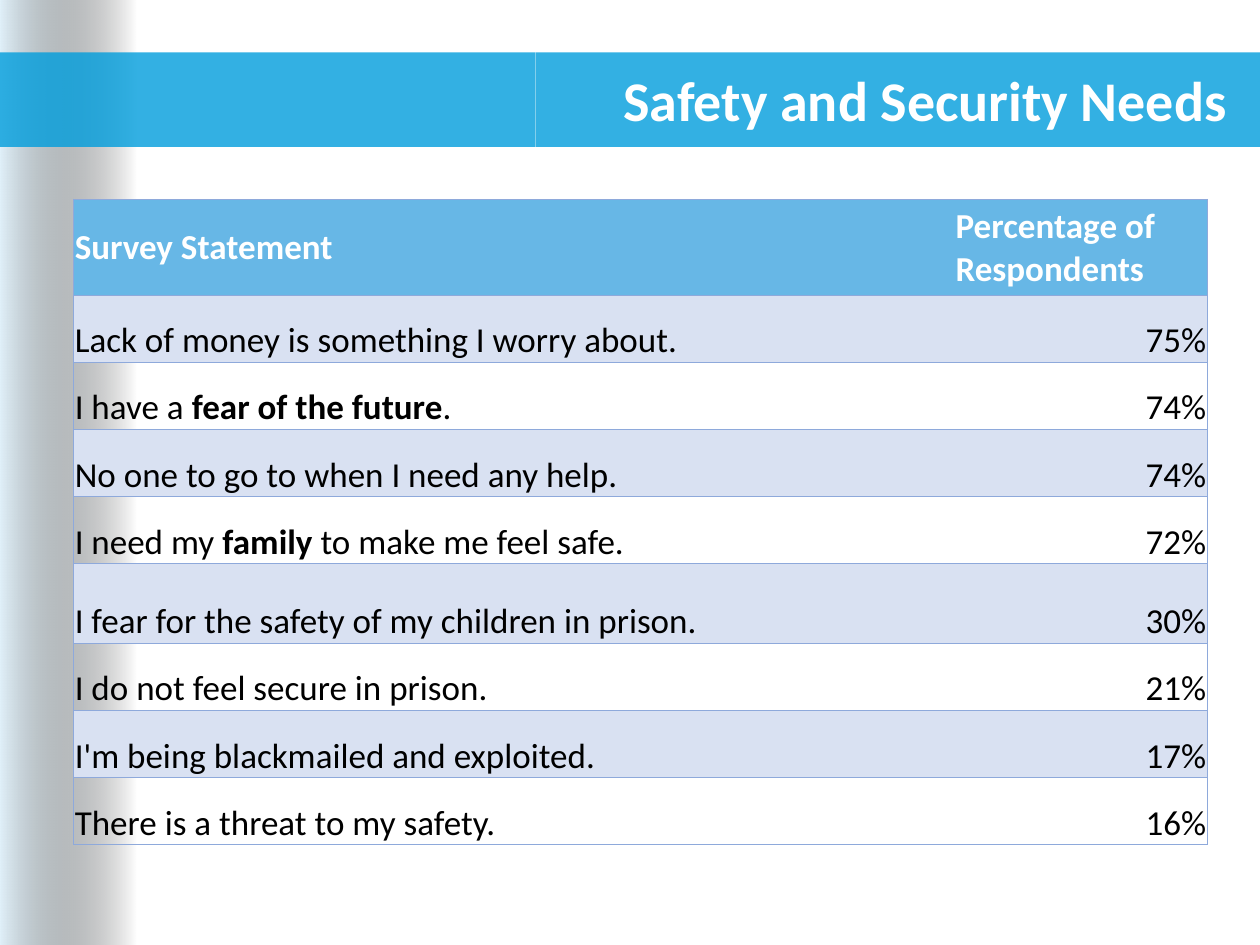
from lxml import etree
from pptx import Presentation
from pptx.dml.color import RGBColor
from pptx.enum.shapes import MSO_SHAPE
from pptx.enum.text import MSO_ANCHOR, PP_ALIGN
from pptx.oxml.ns import qn
from pptx.util import Pt

RECTANGLE = MSO_SHAPE.RECTANGLE
MIDDLE, BOTTOM = MSO_ANCHOR.MIDDLE, MSO_ANCHOR.BOTTOM
LEFT, RIGHT = PP_ALIGN.LEFT, PP_ALIGN.RIGHT

FONT = "Calibri"
WHITE, BLACK = "FFFFFF", "000000"
BAND_BLUE, HEADER_BLUE = "009DDC", "67B7E6"
STRIPE, BORDER = "D9E1F2", "8EA9DB"
BORDER_WIDTH = 0.5

SLIDE_SIZE = (720, 540)
BAND_TOP, BAND_HEIGHT, BAND_SPLIT = 30, 54, 306
COLUMN_WIDTHS = (503.3, 144.7)
HEADER_HEIGHT, ROW_HEIGHT, TALL_ROW_HEIGHT = 54.8, 38.4, 45.4
TALL_ROW = 5

HEADINGS = ("Survey Statement", "Percentage of Respondents")
# Each statement is a list of pieces; every second piece is bold.
RESPONSES = [
    (["Lack of money is something I worry about."], "75%"),
    (["I have a ", "fear of the future", "."], "74%"),
    (["No one to go to when I need any help."], "74%"),
    (["I need my ", "family", " to make me feel safe."], "72%"),
    (["I fear for the safety of my children in prison."], "30%"),
    (["I do not feel secure in prison."], "21%"),
    (["I'm being blackmailed and exploited."], "17%"),
    (["There is a threat to my safety."], "16%"),
]


def color(hex_string):
    return RGBColor.from_string(hex_string)


def set_alpha(color_parent, percent):
    """Set the opacity of the RGB colour found under an XML element."""
    rgb = color_parent.find(".//" + qn("a:srgbClr"))
    etree.SubElement(rgb, qn("a:alpha"), val=str(percent * 1000))


def add_rectangle(slide, left, top, width, height):
    shape = slide.shapes.add_shape(
        RECTANGLE, Pt(left), Pt(top), Pt(width), Pt(height))
    shape.shadow.inherit = False
    shape.line.fill.background()
    return shape


def add_side_gradient(slide):
    shape = add_rectangle(slide, 0, 0, 78, SLIDE_SIZE[1])
    shape.fill.gradient()
    shape.fill.gradient_angle = 0
    start, end = shape.fill.gradient_stops
    start.position, end.position = 0, 1
    start.color.rgb, end.color.rgb = color("E1F1FA"), color(BLACK)
    last_stop = shape.element.spPr.findall(".//" + qn("a:gs"))[-1]
    set_alpha(last_stop, 0)


def add_band(slide, left, right):
    shape = add_rectangle(slide, left, BAND_TOP, right - left, BAND_HEIGHT)
    shape.fill.solid()
    shape.fill.fore_color.rgb = color(BAND_BLUE)
    set_alpha(shape.element.spPr, 80)


def write_text(frame, pieces, size=20, hex_color=BLACK, bold=False, align=LEFT):
    """Write one paragraph; every second piece switches to bold."""
    frame.word_wrap = True
    paragraph = frame.paragraphs[0]
    paragraph.alignment = align
    for index, piece in enumerate(pieces):
        run = paragraph.add_run()
        run.text = piece
        run.font.name = FONT
        run.font.size = Pt(size)
        run.font.bold = bold or index % 2 == 1
        run.font.color.rgb = color(hex_color)


def add_title(slide, text):
    box = slide.shapes.add_textbox(Pt(182), Pt(33), Pt(526.5), Pt(47))
    box.text_frame.vertical_anchor = MIDDLE
    write_text(box.text_frame, [text], size=32, hex_color=WHITE, bold=True,
               align=RIGHT)


def set_borders(cell, visible_sides):
    properties = cell._tc.get_or_add_tcPr()
    for side in "LRTB":
        line = etree.SubElement(properties, qn("a:ln" + side),
                                w=str(Pt(BORDER_WIDTH)))
        if side in visible_sides:
            fill = etree.SubElement(line, qn("a:solidFill"))
            etree.SubElement(fill, qn("a:srgbClr"), val=BORDER)
        else:
            etree.SubElement(line, qn("a:noFill"))


def format_cell(cell, column, fill, anchor):
    cell.margin_left = cell.margin_right = cell.margin_top = Pt(0.75)
    cell.margin_bottom = Pt(0)
    cell.vertical_anchor = anchor
    set_borders(cell, "LTB" if column == 0 else "RTB")
    if fill:
        cell.fill.solid()
        cell.fill.fore_color.rgb = color(fill)
    else:
        cell.fill.background()


def add_survey_table(slide):
    heights = [HEADER_HEIGHT] + [ROW_HEIGHT] * len(RESPONSES)
    heights[TALL_ROW] = TALL_ROW_HEIGHT
    table = slide.shapes.add_table(
        len(heights), len(COLUMN_WIDTHS), Pt(42), Pt(113.8),
        Pt(sum(COLUMN_WIDTHS)), Pt(sum(heights))).table
    table.horz_banding = False
    for column, width in zip(table.columns, COLUMN_WIDTHS):
        column.width = Pt(width)
    for row, height in zip(table.rows, heights):
        row.height = Pt(height)

    for column, heading in enumerate(HEADINGS):
        cell = table.cell(0, column)
        format_cell(cell, column, HEADER_BLUE, MIDDLE)
        write_text(cell.text_frame, [heading], hex_color=WHITE, bold=True)
    for row, (statement, percentage) in enumerate(RESPONSES, start=1):
        contents = ((statement, LEFT), ([percentage], RIGHT))
        for column, (pieces, align) in enumerate(contents):
            cell = table.cell(row, column)
            format_cell(cell, column, STRIPE if row % 2 else None, BOTTOM)
            write_text(cell.text_frame, pieces, align=align)


def main():
    presentation = Presentation()
    presentation.slide_width, presentation.slide_height = map(Pt, SLIDE_SIZE)
    slide = presentation.slides.add_slide(presentation.slide_layouts[6])
    add_side_gradient(slide)
    add_band(slide, BAND_SPLIT, SLIDE_SIZE[0])
    add_band(slide, 0, BAND_SPLIT)
    add_title(slide, "Safety and Security Needs")
    add_survey_table(slide)
    presentation.save("out.pptx")


if __name__ == "__main__":
    main()
